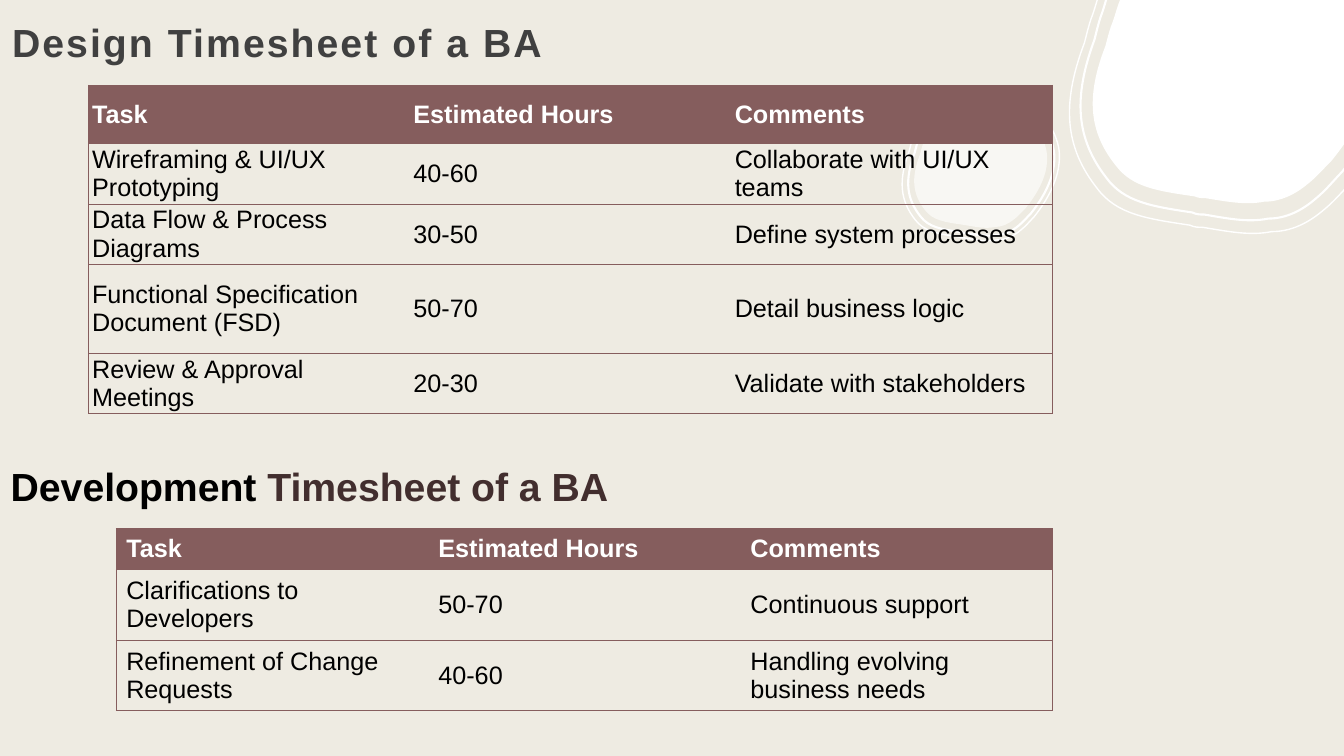
import pptx
import pptx.util
import pptx.dml.color
import pptx.enum.text
import pptx.oxml
import pptx.oxml.ns
from lxml import etree

Pt = pptx.util.Pt
RGBColor = pptx.dml.color.RGBColor
qn = pptx.oxml.ns.qn
MIDDLE = pptx.enum.text.MSO_ANCHOR.MIDDLE
BOTTOM = pptx.enum.text.MSO_ANCHOR.BOTTOM

CREAM = RGBColor(0xEE, 0xEB, 0xE2)
WHITE = RGBColor(0xFF, 0xFF, 0xFF)
BLACK = RGBColor(0, 0, 0)
MAROON = RGBColor(0x85, 0x5D, 0x5D)
DARK_MAROON = RGBColor(0x42, 0x2E, 0x2E)
CHARCOAL = RGBColor(0x40, 0x40, 0x40)
FONT = "Arial"

# Pebble outlines: Bezier control points in a 156 x 149 box
PEBBLE_WIDTH, PEBBLE_HEIGHT = 156, 149
CUT_LEVEL = 34
PEBBLE_TOP = [
    (81, 0), (84, 0), (87, 0), (98, 2), (109, 5), (118, 10),
    (128, 15), (137, 22), (143, 30), (149, 37), (153, 46), (155, 55),
]
PEBBLE_BODY = [
    (157, 64), (156, 73), (154, 82), (150, 97), (142, 111), (131, 125),
    (127, 129), (123, 134), (118, 138), (111, 144), (103, 148), (94, 148),
    (84, 150), (74, 148), (62, 146), (60, 146), (58, 146), (56, 145),
    (36, 142), (22, 140), (13, 128), (-2, 109), (-4, 89), (7, 60),
    (8, 56), (9, 52), (10, 49),
]
PEBBLE_CLOSING = [
    (15, 34), (17, 27), (25, 20), (34, 12), (43, 7), (54, 4), (62, 1), (70, 0), (78, 0),
]
WHOLE_PEBBLE = [(78, 0)] + PEBBLE_TOP + PEBBLE_BODY + PEBBLE_CLOSING
CUT_PEBBLE = ([(146, CUT_LEVEL), (150, 41), (153, 48), (155, 55)] + PEBBLE_BODY
              + [(12, 44), (13, 39), (15, CUT_LEVEL)])

DESIGN_ROWS = [
    ("Task", "Estimated Hours", "Comments"),
    ("Wireframing & UI/UX Prototyping", "40-60", "Collaborate with UI/UX teams"),
    ("Data Flow & Process Diagrams", "30-50", "Define system processes"),
    ("Functional Specification Document (FSD)", "50-70", "Detail business logic"),
    ("Review & Approval Meetings", "20-30", "Validate with stakeholders"),
]
DEVELOPMENT_ROWS = [
    ("Task", "Estimated Hours", "Comments"),
    ("Clarifications to Developers", "50-70", "Continuous support"),
    ("Refinement of Change Requests", "40-60", "Handling evolving business needs"),
]


def add_pebble(slide, left, top, width, height, cut=False, line_width=None, opacity=100):
    """Fit a whole or cut pebble to the given box."""
    outline = CUT_PEBBLE if cut else WHOLE_PEBBLE
    level = CUT_LEVEL if cut else 0
    x_scale, y_scale = width / PEBBLE_WIDTH, height / (PEBBLE_HEIGHT - level)
    points = [(Pt(left + x * x_scale), Pt(top + (y - level) * y_scale)) for x, y in outline]
    builder = slide.shapes.build_freeform(*points[0])
    builder.add_line_segments(points[1:], close=True)
    pebble = builder.convert_to_shape()

    # Turn each three line segments into one curve
    segments = list(pebble._element.iter(qn("a:lnTo")))
    for i in range(0, len(points) - 1, 3):
        curve = etree.Element(qn("a:cubicBezTo"))
        segments[i].addprevious(curve)
        for segment in segments[i:i + 3]:
            curve.append(segment[0])
            segment.getparent().remove(segment)

    pebble.shadow.inherit = False
    if line_width:
        pebble.fill.background()
        pebble.line.color.rgb = WHITE
        pebble.line.width = Pt(line_width)
        return
    pebble.fill.solid()
    pebble.fill.fore_color.rgb = WHITE
    pebble.line.fill.background()
    if opacity < 100:
        color = pebble._element.spPr.find(".//" + qn("a:srgbClr"))
        etree.SubElement(color, qn("a:alpha"), val=str(opacity * 1000))


def add_decoration(slide):
    """Two pebbles, each inside two thin rings."""
    add_pebble(slide, 780.5, 0, 203, 145.4, cut=True)
    add_pebble(slide, 771.8, -9.4, 222.5, 167, cut=True, line_width=1.5)
    add_pebble(slide, 763.9, -9.4, 239.8, 176.4, cut=True, line_width=1)
    add_pebble(slide, 648.7, 69.1, 104.4, 99.4, line_width=1.5)
    add_pebble(slide, 644.4, 64.8, 112.3, 107.3, line_width=1)
    add_pebble(slide, 653, 74.2, 95, 88.6, opacity=60)


def add_heading(slide, left, top, width, height, pieces, anchor=None, insets=None, spacing=0):
    box = slide.shapes.add_textbox(Pt(left), Pt(top), Pt(width), Pt(height))
    frame = box.text_frame
    frame.word_wrap = True
    if anchor is not None:
        frame.vertical_anchor = anchor
    if insets:
        frame.margin_left = frame.margin_top = frame.margin_right = Pt(insets[0])
        frame.margin_bottom = Pt(insets[1])
    heading = frame.paragraphs[0]
    heading.font.name, heading.font.size, heading.font.bold = FONT, Pt(28), True
    for text, color in pieces:
        run = heading.add_run()
        run.text = text
        run.font.color.rgb = color
        if spacing:
            run._r.get_or_add_rPr().set("spc", str(round(spacing * 100)))


def set_borders(cell, sides):
    """Draw the named sides and clear the others."""
    properties = cell._tc.get_or_add_tcPr()
    for side in "LRTB":
        paint = (f'<a:solidFill><a:srgbClr val="{MAROON}"/></a:solidFill>'
                 if side in sides else "<a:noFill/>")
        properties.append(pptx.oxml.parse_xml(
            f'<a:ln{side} {pptx.oxml.ns.nsdecls("a")} w="{Pt(0.75)}">{paint}</a:ln{side}>'))


def add_timesheet(slide, left, top, width, rows, row_heights, margins=None):
    columns = len(rows[0])
    table = slide.shapes.add_table(len(rows), columns, Pt(left), Pt(top),
                                   Pt(width), Pt(sum(row_heights))).table
    for column in table.columns:
        column.width = Pt(width / columns)
    for r, (texts, height) in enumerate(zip(rows, row_heights)):
        table.rows[r].height = Pt(height)
        for c, text in enumerate(texts):
            cell = table.cell(r, c)
            cell.vertical_anchor = MIDDLE
            if margins:
                cell.margin_left = cell.margin_right = Pt(margins[0])
                cell.margin_top = cell.margin_bottom = Pt(margins[1])
            set_borders(cell, "TB" + "L" * (c == 0) + "R" * (c == columns - 1))
            if r == 0:
                cell.fill.solid()
                cell.fill.fore_color.rgb = MAROON
            else:
                cell.fill.background()
            cell.text = text
            font = cell.text_frame.paragraphs[0].font
            font.name, font.size, font.bold = FONT, Pt(18), r == 0
            font.color.rgb = WHITE if r == 0 else BLACK


def build_timesheet_slide(deck):
    slide = deck.slides.add_slide(deck.slide_layouts[6])
    slide.background.fill.solid()
    slide.background.fill.fore_color.rgb = CREAM
    add_decoration(slide)

    # Design timesheet
    add_heading(slide, 0, 0, 574.6, 54, [("Design Timesheet of a BA", CHARCOAL)],
                anchor=BOTTOM, insets=(8.64, 7.2), spacing=1.5)
    add_timesheet(slide, 63.2, 61, 688.6, DESIGN_ROWS,
                  [41.5, 43.2, 43.2, 63.5, 43.2], margins=(2.6, 0))

    # Development timesheet
    add_heading(slide, 0.6, 326.9, 751, 41.2,
                [("Development", BLACK), (" Timesheet of a BA", DARK_MAROON)])
    add_timesheet(slide, 83, 377.7, 668.8, DEVELOPMENT_ROWS, [29.2, 50.4, 50.4])


def main():
    deck = pptx.Presentation()
    deck.slide_width, deck.slide_height = Pt(960), Pt(540)
    build_timesheet_slide(deck)
    deck.save("out.pptx")


if __name__ == "__main__":
    main()
